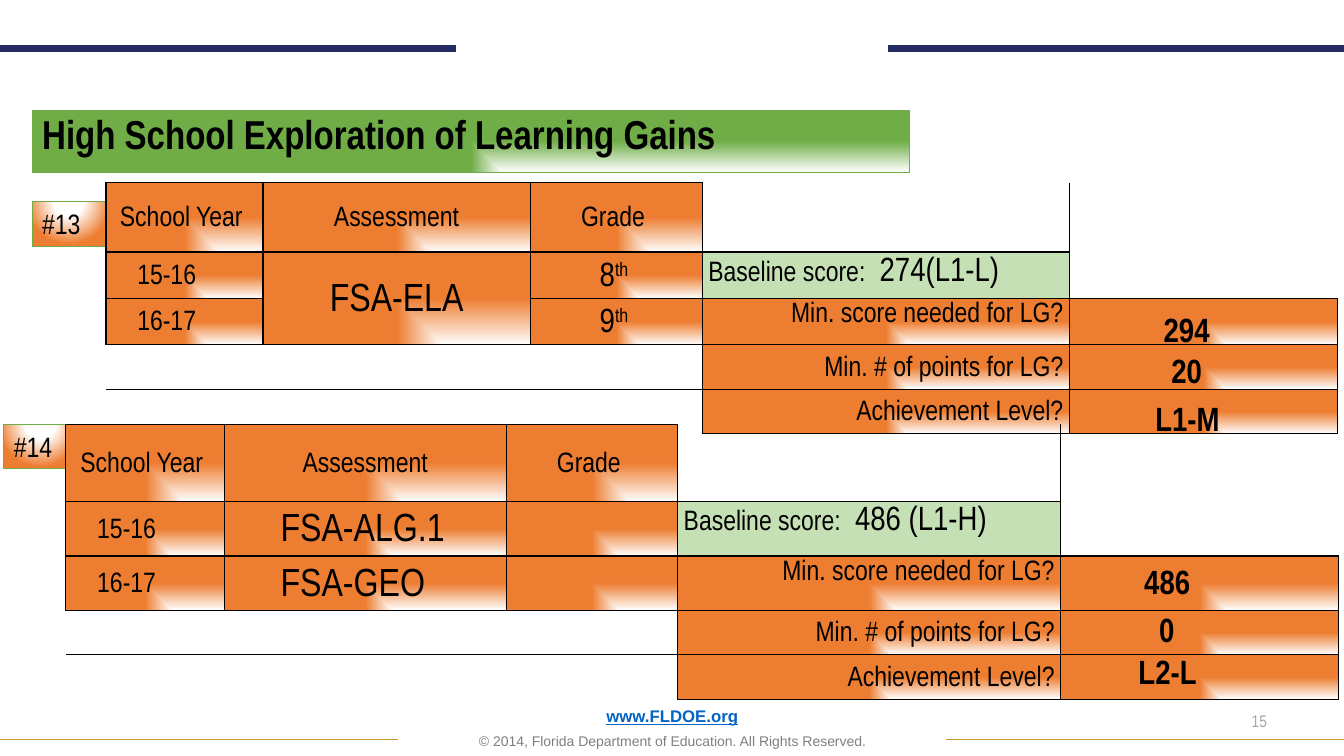
from lxml import etree
from pptx import Presentation, util as u
from pptx.dml.color import RGBColor
from pptx.enum import shapes, text
from pptx.oxml import parse_xml
from pptx.oxml.ns import nsdecls, qn

COLORS = {"black": "000000", "white": "FFFFFF", "navy": "262A63", "gold": "CD9D2C",
          "green": "70AD47", "pale": "C5E0B4", "orange": "ED7D31",
          "link": "0563C1", "gray": "808080", "light": "A6A6A6"}
LEFT, CENTER, RIGHT = text.PP_ALIGN.LEFT, text.PP_ALIGN.CENTER, text.PP_ALIGN.RIGHT
TOP, MIDDLE, BOTTOM = (text.MSO_ANCHOR.TOP, text.MSO_ANCHOR.MIDDLE,
                       text.MSO_ANCHOR.BOTTOM)
PLAIN_TABLE = "{2D5ABB26-0587-4C30-8999-92F81FD0307C}"


def rgb(name):
    return RGBColor.from_string(COLORS[name])


class Deck:
    font = "Arial Narrow"

    def __init__(self):
        self.prs = Presentation()
        self.prs.slide_width, self.prs.slide_height = u.Cm(33.87), u.Cm(19.05)
        self.s = self.prs.slides.add_slide(self.prs.slide_layouts[5])

    def gradient(self, fill, parent, color, shape="rect", white=0,
                 to='l="100000" t="100000"'):
        """Gradient from white to the colour, in place of a solid fill."""
        fill.solid()
        stops = "".join(f'<a:gs pos="{pos * 1000}"><a:srgbClr val="{COLORS[c]}"/></a:gs>'
                        for pos, c in ((0, "white"), (white, "white"), (100, color)))
        parent.replace(parent.find(qn("a:solidFill")), parse_xml(
            f'<a:gradFill rotWithShape="1" {nsdecls("a")}><a:gsLst>{stops}</a:gsLst>'
            f'<a:path path="{shape}"><a:fillToRect {to}/></a:path></a:gradFill>'))

    def para(self, p, words, size, color="black", align=LEFT, bold=False,
             spacing=None, font=None):
        p.text = words
        p.alignment = align
        if spacing:
            p.line_spacing = spacing
        p.font.name, p.font.size, p.font.bold = font or self.font, u.Pt(size), bold
        p.font.color.rgb = rgb(color)

    def title(self, words, x, y, w, h):
        sp = self.s.shapes.title
        sp.left, sp.top, sp.width, sp.height = map(u.Cm, (x, y, w, h))
        self.gradient(sp.fill, sp._element.spPr, "green")
        sp.line.color.rgb, sp.line.width = rgb("green"), u.Pt(0.5)
        tf = sp.text_frame
        tf.auto_size, tf.vertical_anchor = text.MSO_AUTO_SIZE.NONE, TOP
        self.para(tf.paragraphs[0], words, 28.8, bold=True, spacing=0.9)

    def text_box(self, x, y, w, h, anchor=TOP):
        tf = self.s.shapes.add_textbox(*map(u.Cm, (x, y, w, h))).text_frame
        tf.word_wrap, tf.vertical_anchor = True, anchor
        return tf

    def label(self, words, x, y, width):
        sp = self.s.shapes.add_shape(shapes.MSO_SHAPE.RECTANGLE,
                                     *map(u.Cm, (x, y, 1.85, 1.12)))
        sp.shadow.inherit = False
        self.gradient(sp.fill, sp._element.spPr, "orange", "circle", 35,
                      'l="50000" t="-80000" r="50000" b="180000"')
        sp.line.color.rgb, sp.line.width = rgb("green"), u.Pt(width)
        sp.text_frame.vertical_anchor = TOP
        self.para(sp.text_frame.paragraphs[0], words, 20)

    def rule(self, x1, x2, y, color, width):
        c = self.s.shapes.add_connector(shapes.MSO_CONNECTOR.STRAIGHT,
                                        *map(u.Cm, (x1, y, x2, y)))
        c.line.color.rgb, c.line.width = rgb(color), u.Pt(width)
        etree.SubElement(c._element.spPr, qn("a:effectLst"))

    def cell(self, cell, runs, align=LEFT, indent=0, anchor=MIDDLE):
        cell.vertical_anchor = anchor
        p = cell.text_frame.paragraphs[0]
        p.alignment, p.line_spacing = align, 1.15
        if indent:
            p._p.get_or_add_pPr().set("marL", str(u.Cm(indent)))
        p.font.name, p.font.color.rgb = self.font, rgb("black")
        for words, size, raised in runs:
            r = p.add_run()
            r.text, r.font.size = words, u.Pt(size)
            if raised:
                r._r.get_or_add_rPr().set("baseline", "30000")

    def gains_table(self, x, y, cols, rows, assessments, grades, baseline):
        frame = self.s.shapes.add_table(len(rows), len(cols), u.Cm(x), u.Cm(y),
                                        u.Cm(sum(cols)), u.Cm(sum(rows)))
        t = frame.table
        t.first_row = t.horz_banding = False
        t._tbl.tblPr.find(qn("a:tableStyleId")).text = PLAIN_TABLE
        for col, w in zip(t.columns, cols):
            col.width = u.Cm(w)
        for row, h in zip(t.rows, rows):
            row.height = u.Cm(h)

        # Merged cells
        for r in (3, 4):
            t.cell(r, 0).merge(t.cell(r, 2))
        if len(assessments) == 1:
            t.cell(1, 1).merge(t.cell(2, 1))

        # Left block: years, assessments, grades
        for c, words in enumerate(("School Year ", "Assessment", "Grade ")):
            self.cell(t.cell(0, c), [(words, 20, False)], CENTER)
        for r, year in enumerate(("15-16", "16-17"), 1):
            self.cell(t.cell(r, 0), [(year, 20, False)], indent=0.64)
        for r, words in enumerate(assessments, 1):
            place = {"align": CENTER} if len(assessments) == 1 else {"indent": 1.27}
            self.cell(t.cell(r, 1), [(words, 28, False)], **place)
        for r, grade in enumerate(grades, 1):
            self.cell(t.cell(r, 2), [(grade, 24, False), ("th ", 24, True)], CENTER)

        # Right block: baseline and questions
        self.cell(t.cell(1, 3), [("Baseline score: ", 20, False),
                                 (" " + baseline, 24, False)], anchor=TOP)
        questions = ("Min. score needed for LG?", "Min. # of points for LG?",
                     "Achievement Level?")
        for r, words in enumerate(questions, 2):
            self.cell(t.cell(r, 3), [(words, 20, False)], RIGHT,
                      anchor=TOP if r == 2 else MIDDLE)
        self.paint(t)

    def paint(self, t):
        """Fill the staircase of cells and rule every edge that touches it."""
        filled = {(r, c) for r in range(3) for c in range(3)}
        filled |= {(r, c) for r in range(2, 5) for c in (3, 4)} | {(1, 3)}
        for r in range(5):
            for c in range(5):
                cell = t.cell(r, c)
                cell.margin_left = cell.margin_right = u.Cm(0.15)
                cell.margin_top = cell.margin_bottom = 0
                tcPr = cell._tc.get_or_add_tcPr()
                across = cell.span_width if cell.is_merge_origin else 1
                beside = {"L": (r, c - 1), "R": (r, c + across),
                          "T": (r - 1, c), "B": (r + 1, c)}
                for side, neighbour in beside.items():
                    if filled & {(r, c), neighbour}:
                        tcPr.append(parse_xml(
                            f'<a:ln{side} w="12700" {nsdecls("a")}><a:solidFill>'
                            f'<a:srgbClr val="{COLORS["black"]}"/></a:solidFill></a:ln{side}>'))
                if (r, c) == (1, 3):
                    cell.fill.solid()
                    cell.fill.fore_color.rgb = rgb("pale")
                elif (r, c) in filled:
                    self.gradient(cell.fill, tcPr, "orange")
                else:
                    cell.fill.background()


def main():
    d = Deck()

    # Rules at top and bottom
    for x1, x2, y, color, width in ((0, 11.48, 1.22, "navy", 5), (22.38, 33.87, 1.22, "navy", 5),
                                    (0, 10.03, 18.64, "gold", 1), (23.85, 33.87, 18.64, "gold", 1)):
        d.rule(x1, x2, y, color, width)

    # Footer and page number
    tf = d.text_box(2.34, 17.93, 29.21, 1.09, BOTTOM)
    d.para(tf.paragraphs[0], "www.FLDOE.org", 12, "link", CENTER, True, 0.9, "Arial")
    tf.paragraphs[0].font.underline = True
    p = tf.add_paragraph()
    d.para(p, "© 2014, Florida Department of Education. All Rights Reserved.",
           10, "gray", CENTER, False, 0.9, "Arial")
    p.space_before = u.Pt(6)
    tf = d.text_box(24.28, 17.65, 7.9, 1.02, MIDDLE)
    d.para(tf.paragraphs[0], "15", 12, "light", RIGHT)

    # Title and example numbers
    d.title("High School Exploration of Learning Gains", 0.81, 2.77, 22.12, 1.57)
    d.label("#13", 0.81, 5.08, 0.5)
    d.label("#14", 0.1, 10.69, 0.75)

    # Tables
    d.gains_table(2.67, 4.6, (3.96, 6.73, 4.34, 9.25, 6.76), (1.75, 1.17, 1.17, 1.12, 1.12),
                  ["FSA-ELA"], ["8", "9"], "274(L1-L)")
    d.gains_table(1.66, 10.69, (3.99, 7.11, 4.32, 9.65, 7.01), (1.95, 1.37, 1.37, 1.12, 1.12),
                  ["FSA-ALG.1", "FSA-GEO"], [], "486 (L1-H)")

    # Answers
    for words, x, y, w in (("294", 28.47, 7.65, 2.87), ("20", 28.47, 8.69, 2.87),
                           ("L1-M", 28.68, 9.91, 2.49), ("486", 28.17, 14, 2.49),
                           ("0", 27.97, 15.21, 2.87), ("L2-L", 28.27, 16.28, 2.31)):
        tf = d.text_box(x, y, w, 1.27)
        tf.auto_size = text.MSO_AUTO_SIZE.SHAPE_TO_FIT_TEXT
        d.para(tf.paragraphs[0], words, 24, align=CENTER, bold=True)

    d.prs.save("out.pptx")


if __name__ == "__main__":
    main()
